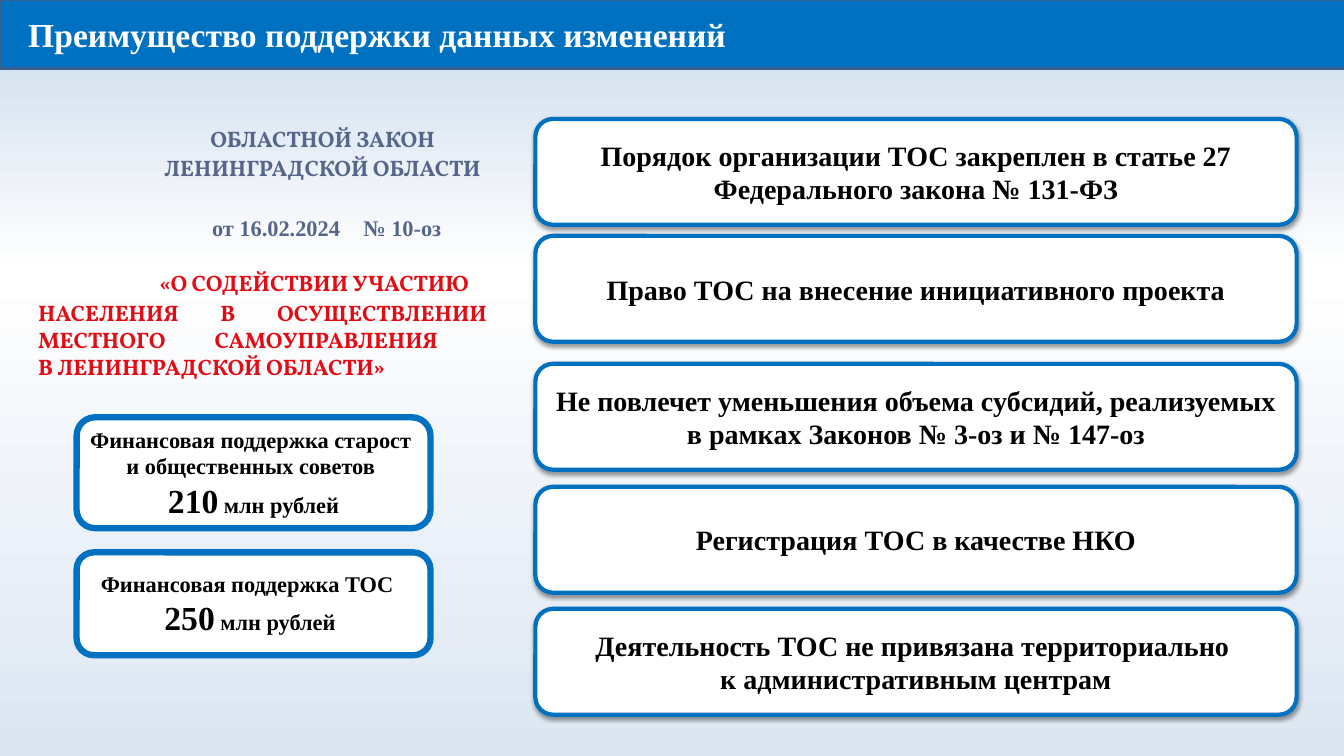
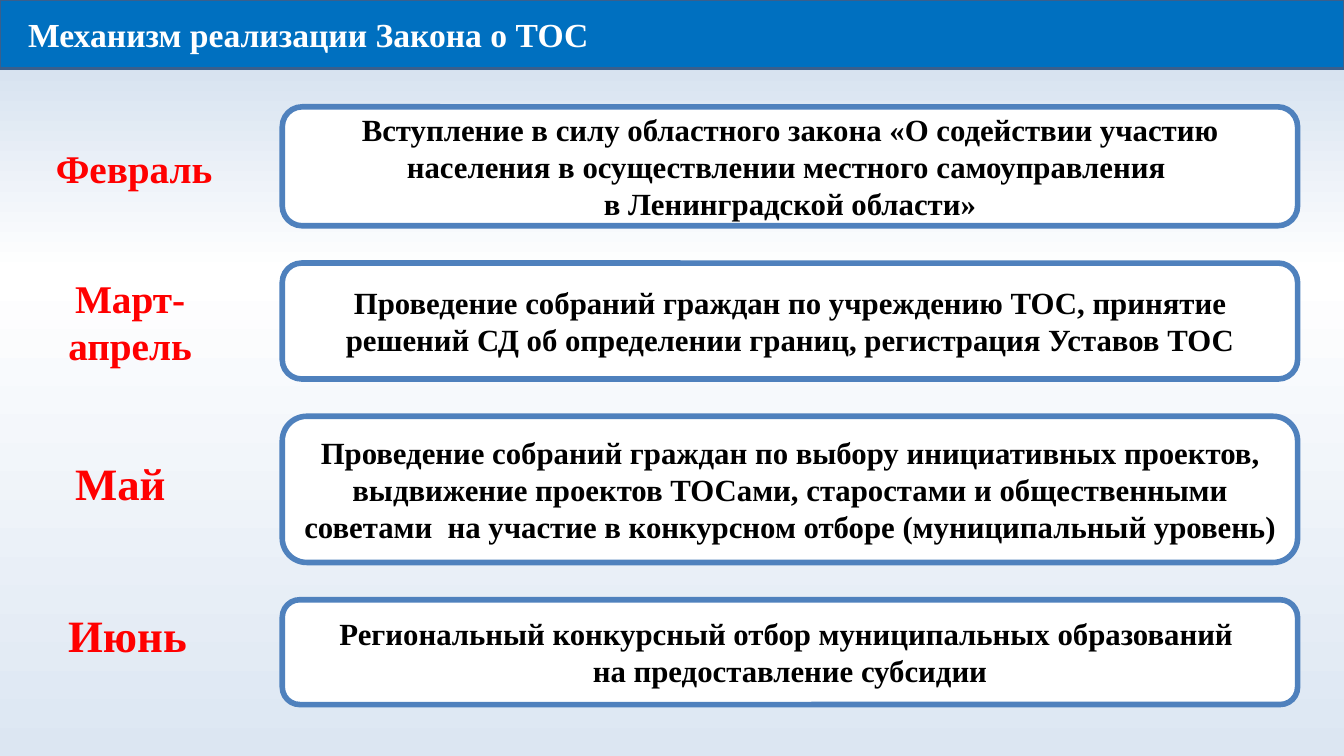
from copy import deepcopy

from lxml import etree
from pptx import Presentation
from pptx.dml.color import RGBColor
from pptx.enum import shapes, text
from pptx.oxml.ns import qn
from pptx.util import Inches, Pt

BLUE = RGBColor(0x00, 0x70, 0xC0)
EDGE = RGBColor(0x3A, 0x5F, 0x8C)
STEEL = RGBColor(0x4F, 0x81, 0xBD)
SLATE = RGBColor(0x56, 0x66, 0x8A)
RED = RGBColor(0xFF, 0x00, 0x00)
RUBY = RGBColor(0xE3, 0x0C, 0x15)
WHITE = RGBColor(0xFF, 0xFF, 0xFF)
BLACK = RGBColor(0x00, 0x00, 0x00)
SKY = [(0, "CAD9EB"), (36, "FFFFFF"), (100, "DCE6F2")]

WIDE, HIGH = 13.33, 7.5
SERIF, LAW = "Times New Roman", "Vollkorn"
RECT = shapes.MSO_SHAPE.RECTANGLE
ROUND = shapes.MSO_SHAPE.ROUNDED_RECTANGLE
MID = text.MSO_ANCHOR.MIDDLE
LEFT, CENTER, FULL = (text.PP_ALIGN.LEFT, text.PP_ALIGN.CENTER,
                      text.PP_ALIGN.JUSTIFY)

# A text is a list of paragraphs; a paragraph is a list of (words, size).
GAINS_TITLE = "Преимущество поддержки данных изменений"
GAINS = [
    (1.18, "Порядок организации ТОС закреплен в статье 27 Федерального закона № 131-ФЗ"),
    (2.34, "Право ТОС на внесение инициативного проекта"),
    (3.61, "Не повлечет уменьшения объема субсидий, реализуемых в рамках Законов № 3-оз и № 147-оз"),
    (4.83, "Регистрация ТОС в качестве НКО"),
    (6.04, "Деятельность ТОС не привязана территориально \nк административным центрам"),
]
FUNDS = [
    (4.14, 1.10, 0.05, [[("Финансовая поддержка старост ", 16)],
                        [("и общественных советов ", 16)],
                        [("210", 24), (" млн рублей", 16)]]),
    (5.48, 1.02, 0.12, [[("Финансовая поддержка ТОС ", 16)],
                        [("250", 24), (" млн рублей", 16)]]),
]
ACT = [
    ((1.50, 1.22, 3.40, 0.79), "ОБЛАСТНОЙ ЗАКОН\nЛЕНИНГРАДСКОЙ ОБЛАСТИ",
     dict(color=SLATE, name=LAW, lead=20.9, inset=(0, 0, 0, 0))),
    ((1.80, 2.10, 2.88, 0.33), "от 16.02.2024\t№ 10-оз",
     dict(color=SLATE, lead=20.9, inset=(0, 0, 0, 0))),
    ((1.58, 2.73, 3.33, 0.38), "«О СОДЕЙСТВИИ УЧАСТИЮ",
     dict(color=RUBY, name=LAW, align=FULL, lead=14.6, inset=(0, 0, 0, 0))),
    ((0.28, 2.92, 4.65, 0.91),
     "НАСЕЛЕНИЯ В ОСУЩЕСТВЛЕНИИ МЕСТНОГО САМОУПРАВЛЕНИЯ \nВ ЛЕНИНГРАДСКОЙ ОБЛАСТИ»",
     dict(color=RUBY, name=LAW, align=FULL)),
]

STEPS_TITLE = "Механизм реализации Закона о ТОС"
STEPS = [  # month, its size and centre, height of the step, paragraphs
    ("Февраль", 28, (1.33, 1.67), 1.18,
     ["Вступление в силу областного закона «О содействии участию населения "
      "в осуществлении местного самоуправления ", "в Ленинградской области»"]),
    ("Март-апрель", 28, (1.29, 3.19), 1.15,
     ["Проведение собраний граждан по учреждению ТОС, принятие решений СД "
      "об определении границ, регистрация Уставов ТОС"]),
    ("Май ", 32, (1.25, 4.79), 1.45,
     ["Проведение собраний граждан по выбору инициативных проектов, выдвижение "
      "проектов ТОСами, старостами и общественными советами  на участие "
      "в конкурсном отборе (муниципальный уровень)"]),
    ("Июнь ", 32, (1.32, 6.30), 1.04,
     ["Региональный конкурсный отбор муниципальных образований ",
      "на предоставление субсидии"]),
]
STEP_TOP, STEP_GAP = 1.06, 0.37
MONTH_W, MONTH_H = 1.9, 1.44


def write(shape, paras, color=BLACK, name=SERIF, align=CENTER, lead=None,
          anchor=text.MSO_ANCHOR.TOP, inset=(0.1, 0.05, 0.1, 0.05)):
    frame = shape.text_frame
    sides = zip(("left", "top", "right", "bottom"), inset)
    looks = {"margin_" + side: Inches(gap) for side, gap in sides}
    looks.update(word_wrap=True, vertical_anchor=anchor)
    for key, val in looks.items():
        setattr(frame, key, val)
    for i, runs in enumerate(paras):
        para = frame.add_paragraph() if i else frame.paragraphs[0]
        para.alignment = align
        if lead:
            para.line_spacing = Pt(lead)
        for words, size in runs:
            for j, line in enumerate(words.split("\n")):
                if j:  # the break keeps the size of the line it ends
                    para.add_line_break()
                    para._p[-1].append(deepcopy(run.font._element))
                run = para.add_run()
                run.text = line
                run.font.color.rgb = color
                for key, val in dict(name=name, size=Pt(size), bold=True).items():
                    setattr(run.font, key, val)


def box(slide, kind, place, fill, edge, width):
    shape = slide.shapes.add_shape(kind, *map(Inches, place))
    shape.shadow.inherit = False
    shape.fill.solid()
    shape.fill.fore_color.rgb = fill
    shape.line.color.rgb = edge
    shape.line.width = Pt(width)
    return shape


def label(slide, place, paras, **looks):
    write(slide.shapes.add_textbox(*map(Inches, place)), paras, **looks)


def shade(shape):
    """Soft shadow straight below the shape."""
    effects = shape._element.spPr.find(qn("a:effectLst"))
    cast = etree.SubElement(effects, qn("a:outerShdw"), blurRad=str(Pt(3.1)),
                            dist=str(Pt(1.6)), dir="5400000", rotWithShape="0")
    tint = etree.SubElement(cast, qn("a:srgbClr"), val="000000")
    etree.SubElement(tint, qn("a:alpha"), val="38000")


def paint_sky(master):
    fill = master.background.fill
    fill.gradient()
    fill.gradient_angle = 270
    stops = next(master.element.iter(qn("a:gsLst")))
    for old in list(stops):
        stops.remove(old)
    for pos, tint in SKY:
        stop = etree.SubElement(stops, qn("a:gs"), pos=str(pos * 1000))
        etree.SubElement(stop, qn("a:srgbClr"), val=tint)


def add_slide(deck, title):
    slide = deck.slides.add_slide(deck.slide_layouts[6])
    band = box(slide, RECT, (0, 0, WIDE, 0.68), BLUE, EDGE, 2)
    write(band, [[(title, 24)]], color=WHITE, align=LEFT, anchor=MID,
          inset=(0.28, 0.05, 0.1, 0.05))
    return slide


def add_gains(deck):
    slide = add_slide(deck, GAINS_TITLE)
    for top, words in GAINS:
        card = box(slide, ROUND, (5.31, top, 7.55, 1.05), WHITE, BLUE, 3)
        shade(card)
        write(card, [[(words, 20)]], anchor=MID)
    for top, high, right, paras in FUNDS:
        card = box(slide, ROUND, (0.76, top, 3.51, high), WHITE, BLUE, 4.5)
        write(card, paras, anchor=MID, inset=(0.05, 0.05, right, 0.05))
    for place, words, looks in ACT:
        label(slide, place, [[(words, 16)]], **looks)


def add_steps(deck):
    slide = add_slide(deck, STEPS_TITLE)
    top = STEP_TOP
    for month, size, (x, y), high, paras in STEPS:
        label(slide, (x - MONTH_W / 2, y - MONTH_H / 2, MONTH_W, MONTH_H),
              [[(month, size)]], color=RED, anchor=MID)
        card = box(slide, ROUND, (2.8, top, 10.07, high), WHITE, STEEL, 4)
        write(card, [[(words, 22)] for words in paras], anchor=MID)
        top += high + STEP_GAP


def main():
    deck = Presentation()
    deck.slide_width, deck.slide_height = Inches(WIDE), Inches(HIGH)
    paint_sky(deck.slide_master)
    add_gains(deck)
    add_steps(deck)
    deck.save("out.pptx")


if __name__ == "__main__":
    main()
